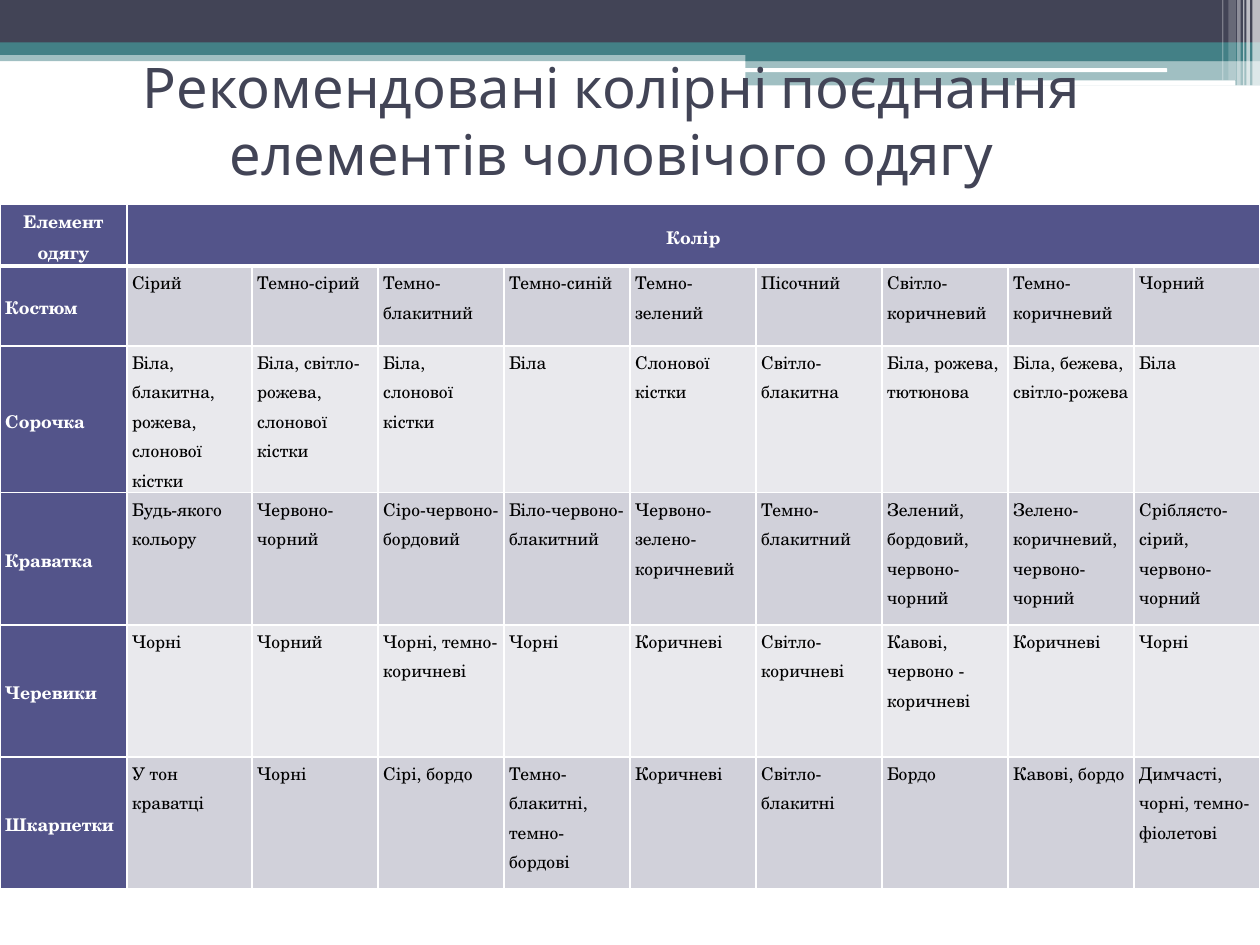
from dataclasses import dataclass

from lxml import etree
from pptx import Presentation
from pptx.dml.color import RGBColor
from pptx.enum.shapes import MSO_SHAPE
from pptx.enum.text import MSO_ANCHOR, PP_ALIGN
from pptx.oxml.ns import qn
from pptx.util import Pt

RECTANGLE = MSO_SHAPE.RECTANGLE
ROUNDED = MSO_SHAPE.ROUNDED_RECTANGLE
MIDDLE, TOP = MSO_ANCHOR.MIDDLE, MSO_ANCHOR.TOP
CENTER, LEFT = PP_ALIGN.CENTER, PP_ALIGN.LEFT

COLORS = {
    "dark": "424456",
    "teal": "438086",
    "white": "FFFFFF",
    "black": "000000",
    "header": "53548A",
    "odd_row": "D1D1DA",
    "even_row": "E9E9ED",
}
TITLE_FONT = "Karla"
TABLE_FONT = "TeX Gyre Schola"

TITLE = "Рекомендовані колірні поєднання елементів чоловічого одягу"
HEADERS = ("Елемент одягу", "Колір")
ROWS = [
    ["Костюм", "Сірий", "Темно-сірий", "Темно-блакитний", "Темно-синій",
     "Темно-зелений", "Пісочний", "Світло-коричневий", "Темно-коричневий", "Чорний"],
    ["Сорочка", "Біла, блакитна, рожева, слонової кістки",
     "Біла, світло-рожева, слонової кістки", "Біла, слонової кістки", "Біла",
     "Слонової кістки", "Світло-блакитна", "Біла, рожева, тютюнова",
     "Біла, бежева, світло-рожева", "Біла"],
    ["Краватка", "Будь-якого кольору", "Червоно-чорний", "Сіро-червоно-бордовий",
     "Біло-червоно-блакитний", "Червоно-зелено-коричневий", "Темно-блакитний",
     "Зелений, бордовий, червоно-чорний", "Зелено-коричневий, червоно-чорний",
     "Сріблясто-сірий, червоно-чорний"],
    ["Черевики", "Чорні", "Чорний", "Чорні, темно-коричневі", "Чорні", "Коричневі",
     "Світло-коричневі", "Кавові, червоно - коричневі", "Коричневі", "Чорні"],
    ["Шкарпетки", "У тон краватці", "Чорні", "Сірі, бордо",
     "Темно-блакитні, темно-бордові", "Коричневі", "Світло-блакитні", "Бордо",
     "Кавові, бордо", "Димчасті, чорні, темно-фіолетові"],
]
COLUMN_WIDTHS = [72.5, 71.5] + [72] * 8
ROW_HEIGHTS = [35.5, 45.5, 84, 75.5, 75.5, 75.5]


@dataclass
class Bar:
    left: float
    top: float
    width: float
    height: float
    color: str
    opacity: int = 100
    kind: int = RECTANGLE


@dataclass
class CellStyle:
    fill: str
    color: str = "black"
    bold: bool = False
    anchor: int = TOP
    alignment: int = LEFT
    bottom_border: float = 1


BARS = [
    # Bands across the top
    Bar(0, 28.5, 720, 6.5, "teal", 50),
    Bar(0, 0, 720, 24.5, "dark"),
    Bar(0, 24.2, 720, 7.2, "teal"),
    # Step on the right
    Bar(426, 28, 294, 7, "teal"),
    Bar(426, 34.6, 294, 14.2, "teal", 50),
    Bar(425.5, 39, 241.5, 2.2, "white", kind=ROUNDED),
    Bar(580, 46, 126, 3, "white", kind=ROUNDED),
    # Thin stripes in the corner
    Bar(715.7, 0, 4.3, 49, "white", 65),
    Bar(712.2, 0, 2, 49, "white", 65),
    Bar(710.4, 0, 0.7, 49, "white", 60),
    Bar(707, 0, 2, 49, "white", 40),
    Bar(702, 0, 4.3, 46, "white", 20),
    Bar(698.4, 0, 0.7, 46, "white", 30),
]


def rgb(name: str) -> RGBColor:
    return RGBColor.from_string(COLORS[name])


def draw_bar(slide, bar: Bar) -> None:
    shape = slide.shapes.add_shape(
        bar.kind, Pt(bar.left), Pt(bar.top), Pt(bar.width), Pt(bar.height))
    shape.shadow.inherit = False
    shape.line.fill.background()
    shape.fill.solid()
    shape.fill.fore_color.rgb = rgb(bar.color)
    if bar.opacity < 100:
        color = shape._element.spPr.find(f"{qn('a:solidFill')}/{qn('a:srgbClr')}")
        etree.SubElement(color, qn("a:alpha"), val=str(bar.opacity * 1000))


def draw_title(slide) -> None:
    box = slide.shapes.add_textbox(Pt(25.5), Pt(26.2), Pt(648), Pt(84))
    frame = box.text_frame
    frame.word_wrap = True
    frame.vertical_anchor = MIDDLE
    paragraph = frame.paragraphs[0]
    paragraph.text = TITLE
    paragraph.alignment = CENTER
    paragraph.font.name = TITLE_FONT
    paragraph.font.size = Pt(32)
    paragraph.font.color.rgb = rgb("dark")


def set_borders(cell, bottom: float) -> None:
    properties = cell._tc.get_or_add_tcPr()
    widths = {"a:lnL": 1, "a:lnR": 1, "a:lnT": 1, "a:lnB": bottom}
    for position, (tag, width) in enumerate(widths.items()):
        line = etree.Element(qn(tag), w=str(int(Pt(width))))
        fill = etree.SubElement(line, qn("a:solidFill"))
        etree.SubElement(fill, qn("a:srgbClr"), val=COLORS["white"])
        properties.insert(position, line)


def fill_cell(cell, text: str, style: CellStyle) -> None:
    cell.fill.solid()
    cell.fill.fore_color.rgb = rgb(style.fill)
    cell.margin_left = cell.margin_right = Pt(3)
    cell.margin_top = cell.margin_bottom = 0
    cell.vertical_anchor = style.anchor
    paragraph = cell.text_frame.paragraphs[0]
    paragraph.text = text
    paragraph.alignment = style.alignment
    paragraph.line_spacing = 1.15
    paragraph.space_after = Pt(10)
    font = paragraph.font
    font.name, font.size, font.bold = TABLE_FONT, Pt(10), style.bold
    font.color.rgb = rgb(style.color)
    set_borders(cell, style.bottom_border)


def draw_table(slide) -> None:
    table = slide.shapes.add_table(
        len(ROW_HEIGHTS), len(COLUMN_WIDTHS), 0, Pt(116.6),
        Pt(sum(COLUMN_WIDTHS)), Pt(sum(ROW_HEIGHTS))).table
    for column, width in zip(table.columns, COLUMN_WIDTHS):
        column.width = Pt(width)
    for row, height in zip(table.rows, ROW_HEIGHTS):
        row.height = Pt(height)

    # Header row, with one heading over all the colours
    header = CellStyle("header", "white", True, MIDDLE, CENTER, bottom_border=3)
    table.cell(0, 1).merge(table.cell(0, len(COLUMN_WIDTHS) - 1))
    for column, text in enumerate(HEADERS):
        fill_cell(table.cell(0, column), text, header)
    for column in range(len(HEADERS), len(COLUMN_WIDTHS)):
        set_borders(table.cell(0, column), header.bottom_border)

    # Garment rows in alternating shades
    label = CellStyle("header", "white", True, MIDDLE)
    for row, texts in enumerate(ROWS, start=1):
        body = CellStyle("odd_row" if row % 2 else "even_row")
        for column, text in enumerate(texts):
            fill_cell(table.cell(row, column), text, body if column else label)


def main() -> None:
    presentation = Presentation()
    presentation.slide_width, presentation.slide_height = Pt(720), Pt(540)
    slide = presentation.slides.add_slide(presentation.slide_layouts[6])
    for bar in BARS:
        draw_bar(slide, bar)
    draw_title(slide)
    draw_table(slide)
    presentation.save("out.pptx")


if __name__ == "__main__":
    main()
